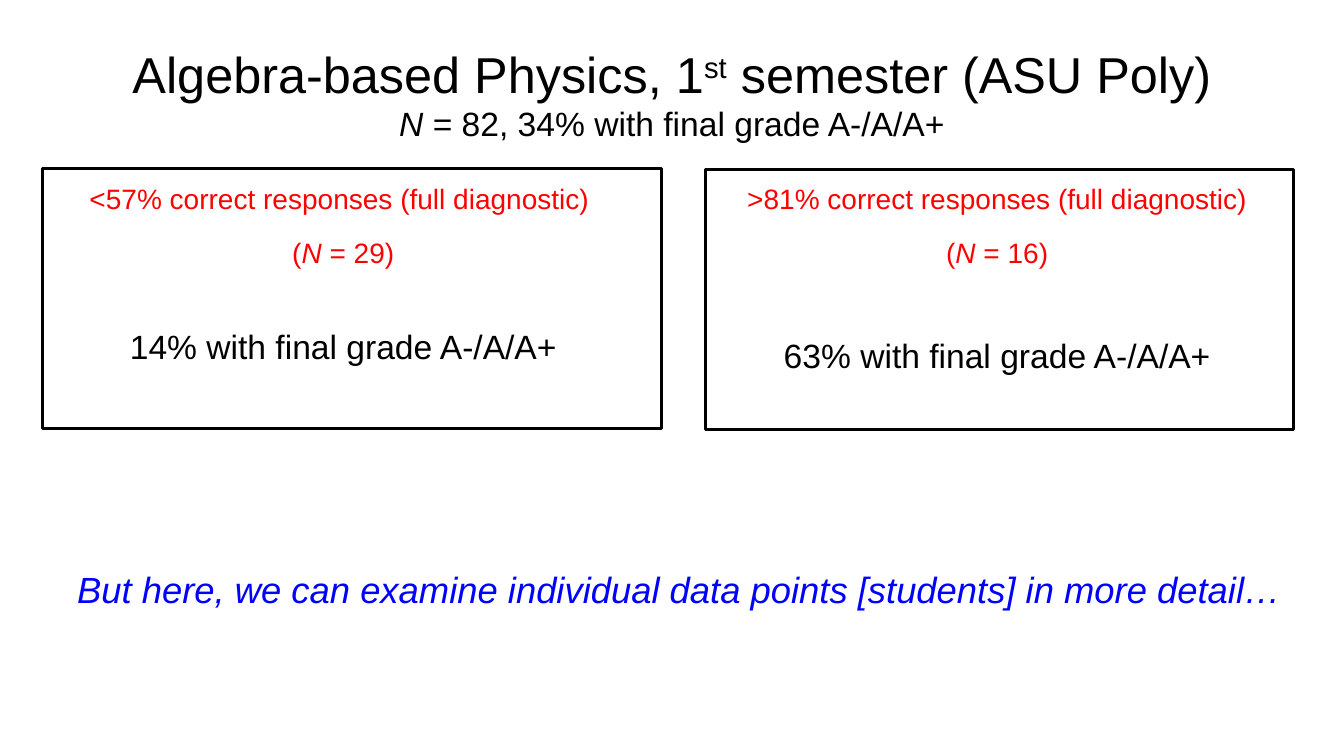
from pptx import Presentation
from pptx import util as u
from pptx.dml.color import RGBColor
from pptx.enum import shapes, text

W, H = 13.33, 7.5


class Theme:
    font = "Arial"
    ink, red, blue = (RGBColor.from_string(c) for c in ("000000", "FF0000", "0000FF"))
    title, note, body, label = (u.Pt(n) for n in (36, 26, 24, 20))
    border = u.Pt(2)
    label_gap = u.Pt(15)


def inches(box):
    return [u.Inches(n) for n in box]


def add_text(slide, box, anchor=text.MSO_ANCHOR.TOP):
    tf = slide.shapes.add_textbox(*inches(box)).text_frame
    tf.word_wrap = True
    tf.vertical_anchor = anchor
    return tf


def add_runs(p, runs, size, color, align=text.PP_ALIGN.CENTER):
    """Each run is a (words, italic) pair."""
    p.alignment = align
    for words, italic in runs:
        r = p.add_run()
        r.text = words
        fmt = {"name": Theme.font, "size": size, "italic": italic}
        for key, value in fmt.items():
            setattr(r.font, key, value)
        r.font.color.rgb = color


def title_block(slide, box):
    p = add_text(slide, box, text.MSO_ANCHOR.MIDDLE).paragraphs[0]
    heading = [("Algebra-based Physics, 1", False), ("st", False),
               (" semester (ASU Poly)", False)]
    add_runs(p, heading, Theme.title, Theme.ink)
    # Ordinal suffix is raised
    p.runs[1]._r.get_or_add_rPr().set("baseline", "30000")
    p.add_line_break()
    add_runs(p, [("N", True), (" = 82, 34% with final grade A-/A/A+", False)],
             Theme.body, Theme.ink)


def group_panel(slide, box, text_left, text_width, label, count, share, gap):
    x, y, w, h = box
    # Text
    tf = add_text(slide, (text_left, 1.75, text_width, h - 0.1))
    add_runs(tf.paragraphs[0], [(label, False)], Theme.label, Theme.red)
    p = tf.add_paragraph()
    p.space_before = Theme.label_gap
    add_runs(p, [("(", False), ("N", True), (f" = {count})", False)],
             Theme.label, Theme.red)
    p = tf.add_paragraph()
    p.space_before = u.Pt(gap)
    add_runs(p, [(f"{share}% with final grade A-/A/A+", False)],
             Theme.body, Theme.ink)
    # Frame
    s = slide.shapes.add_shape(shapes.MSO_SHAPE.RECTANGLE, *inches(box))
    s.shadow.inherit = False
    s.fill.background()
    s.line.color.rgb = Theme.ink
    s.line.width = Theme.border


def closing_note(slide, box):
    p = add_text(slide, box).paragraphs[0]
    words = "But here, we can examine individual data points [students] in more detail…"
    add_runs(p, [(words, True)], Theme.note, Theme.blue, text.PP_ALIGN.LEFT)


def main():
    prs = Presentation()
    prs.slide_width, prs.slide_height = u.Inches(W), u.Inches(H)
    slide = prs.slides.add_slide(prs.slide_layouts[6])

    margin = W * 0.05
    title_block(slide, (margin, H * 0.04, W * 0.9, 1.25))
    panels = [
        ((0.42, 1.67, 6.14, 2.58), 0.25, 6.31,
         "<57% correct responses (full diagnostic) ", 29, 14, 40),
        ((7, 1.68, 5.83, 2.58), 6.78, 6.22,
         ">81% correct responses (full diagnostic)", 16, 63, 47),
    ]
    for panel in panels:
        group_panel(slide, *panel)
    closing_note(slide, (margin, 5.58, W * 0.925, 0.54))

    prs.save("out.pptx")


if __name__ == "__main__":
    main()
